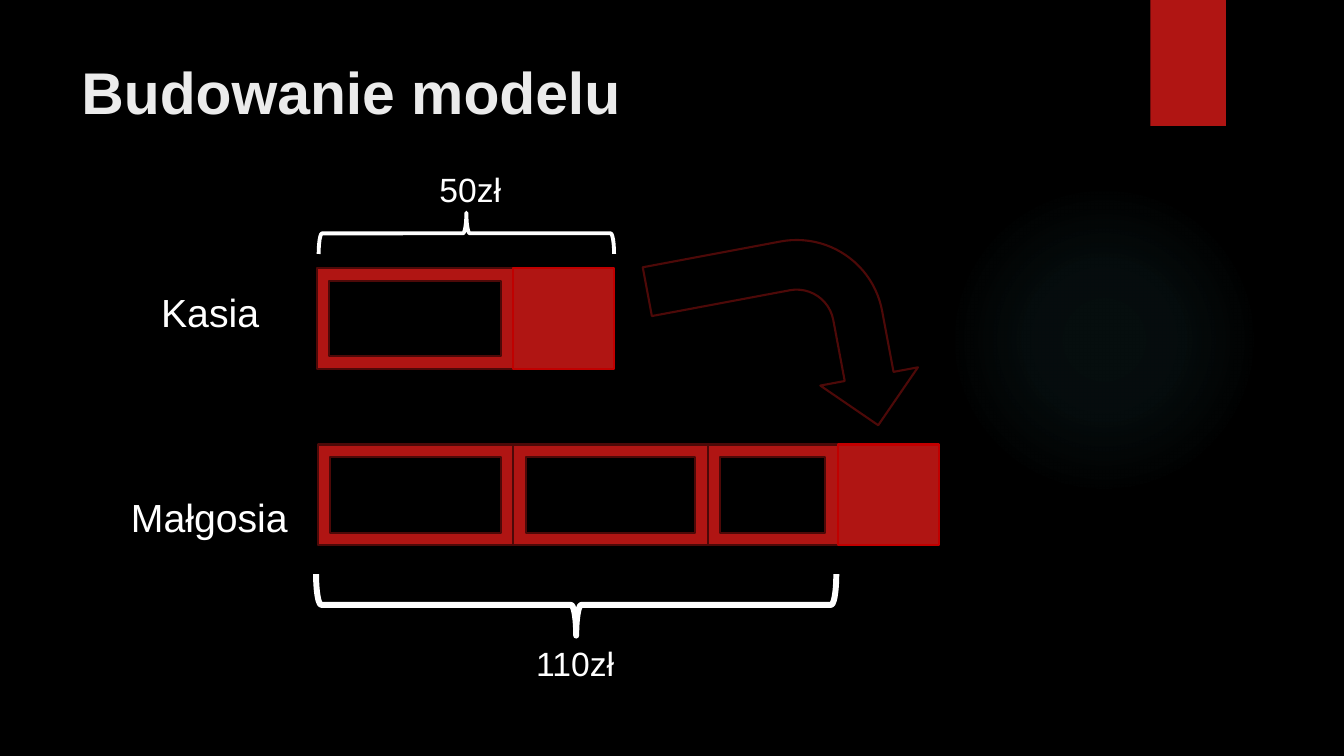
from dataclasses import dataclass
from itertools import accumulate

from lxml import etree
from pptx import Presentation
from pptx import util as u
from pptx.dml.color import RGBColor
from pptx.enum import shapes, text
from pptx.oxml import ns

# Grid: the square block of the bar model is one column by one row
COLUMNS, ROWS = 13.33, 7.5
CELL = u.Inches(1)

BLACK = RGBColor(0x00, 0x00, 0x00)
WHITE = RGBColor(0xFF, 0xFF, 0xFF)
TITLE_GREY = RGBColor(0xEB, 0xEB, 0xEB)
RED = RGBColor(0xB0, 0x15, 0x13)
DARK_RED = RGBColor(0x4D, 0x09, 0x08)
BRIGHT_RED = RGBColor(0xC0, 0x00, 0x00)
TEAL = RGBColor(0x50, 0xB9, 0xC1)

Kind = shapes.MSO_SHAPE


@dataclass(frozen=True)
class Area:
    column: float
    row: float
    columns: float
    rows: float

    def emu(self) -> list[int]:
        return [round(n * CELL) for n in (self.column, self.row, self.columns, self.rows)]


@dataclass(frozen=True)
class Label:
    words: str
    area: Area
    size: float
    color: RGBColor = WHITE
    bold: bool = False
    wrap: bool = False


@dataclass(frozen=True)
class Figure:
    kind: Kind
    area: Area
    fill: RGBColor | None = None
    line: RGBColor | None = None
    weight: float = 1.5
    turn: float = 0


@dataclass(frozen=True)
class Bar:
    column: float
    row: float
    frames: tuple[float, ...]  # widths of the hollow parts before the solid block

    def figures(self) -> list[Figure]:
        starts = list(accumulate(self.frames, initial=self.column))
        hollow = [Figure(Kind.FRAME, Area(start, self.row, width, 1), RED, DARK_RED)
                  for start, width in zip(starts, self.frames)]
        block = Figure(Kind.RECTANGLE, Area(starts[-1], self.row, 1, 1), RED, BRIGHT_RED)
        return hollow + [block]


def draw_figure(slide, figure: Figure):
    shape = slide.shapes.add_shape(figure.kind, *figure.area.emu())
    shape.shadow.inherit = False
    shape.rotation = figure.turn
    if figure.fill is None:
        shape.fill.background()
    else:
        shape.fill.solid()
        shape.fill.fore_color.rgb = figure.fill
    if figure.line is None:
        shape.line.fill.background()
    else:
        shape.line.color.rgb = figure.line
        shape.line.width = u.Pt(figure.weight)
    return shape


def draw_label(slide, label: Label) -> None:
    frame = slide.shapes.add_textbox(*label.area.emu()).text_frame
    frame.word_wrap = label.wrap
    frame.vertical_anchor = text.MSO_ANCHOR.TOP
    run = frame.paragraphs[0].add_run()
    run.text = label.words
    run.font.color.rgb = label.color
    for key, value in {"name": "Arial", "size": u.Pt(label.size), "bold": label.bold}.items():
        setattr(run.font, key, value)


def draw_glow(slide, area: Area, stops: dict[int, int]) -> None:
    """Draw a round glow; stops map position to opacity, both in percent."""
    glow = draw_figure(slide, Figure(Kind.OVAL, area, TEAL))
    solid = glow.fill._xPr.find(ns.qn("a:solidFill"))
    gradient = etree.Element(ns.qn("a:gradFill"), rotWithShape="1")
    stop_list = etree.SubElement(gradient, ns.qn("a:gsLst"))
    for position, opacity in stops.items():
        stop = etree.SubElement(stop_list, ns.qn("a:gs"), pos=str(position * 1000))
        color = etree.SubElement(stop, ns.qn("a:srgbClr"), val=str(TEAL))
        etree.SubElement(color, ns.qn("a:alpha"), val=str(opacity * 1000))
    circle = etree.SubElement(gradient, ns.qn("a:path"), path="circle")
    center = dict.fromkeys("ltrb", "50000")
    etree.SubElement(circle, ns.qn("a:fillToRect"), center)
    solid.getparent().replace(solid, gradient)


RIBBON = Figure(Kind.RECTANGLE, Area(11.41, 0, 0.75, 1.25), RED)
BARS = (
    Bar(3.14, 2.66, (1.95,)),
    Bar(3.15, 4.41, (1.94, 1.93, 1.29)),
)
BRACES = (
    Figure(Kind.LEFT_BRACE, Area(4.42, 0.85, 0.41, 2.93), line=WHITE, weight=2.75, turn=90),
    Figure(Kind.LEFT_BRACE, Area(5.41, 3.42, 0.61, 5.16), line=WHITE, weight=4.25, turn=270),
)
ARROW = Figure(Kind.BENT_ARROW, Area(6.8, 2.14, 1.97, 2.5), BLACK, DARK_RED, turn=79.4)
LABELS = (
    Label("Budowanie modelu", Area(0.71, 0.5, 10.29, 1.53), 42, TITLE_GREY, True, True),
    Label("Kasia", Area(1.5, 2.81, 1.19, 0.57), 28),
    Label("Małgosia", Area(1.2, 4.84, 1.78, 0.57), 28),
    Label("50zł", Area(4.26, 1.63, 0.82, 0.5), 24),
    Label("110zł", Area(5.22, 6.33, 0.98, 0.5), 24),
)


def main() -> None:
    deck = Presentation()
    deck.slide_width, deck.slide_height = round(COLUMNS * CELL), round(ROWS * CELL)
    slide = deck.slides.add_slide(deck.slide_layouts[6])

    # Backdrop
    slide.background.fill.solid()
    slide.background.fill.fore_color.rgb = BLACK
    draw_glow(slide, Area(9.41, 1.83, 3.08, 3.08), {0: 7, 36: 6, 69: 0})
    draw_figure(slide, RIBBON)

    # Title, names and amounts
    for label in LABELS:
        draw_label(slide, label)

    # Bar model with its braces and arrow
    for bar in BARS:
        for part in bar.figures():
            draw_figure(slide, part)
    for figure in (*BRACES, ARROW):
        draw_figure(slide, figure)

    deck.save("out.pptx")


if __name__ == "__main__":
    main()
